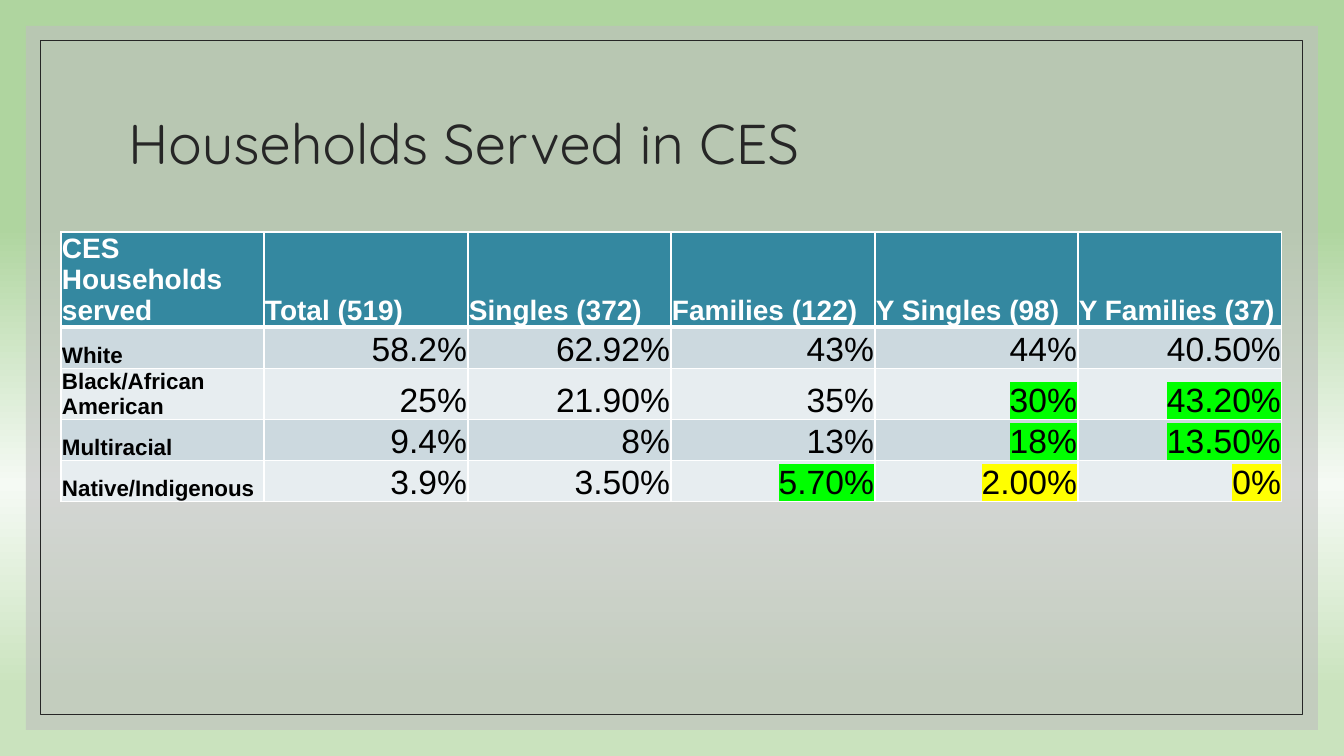
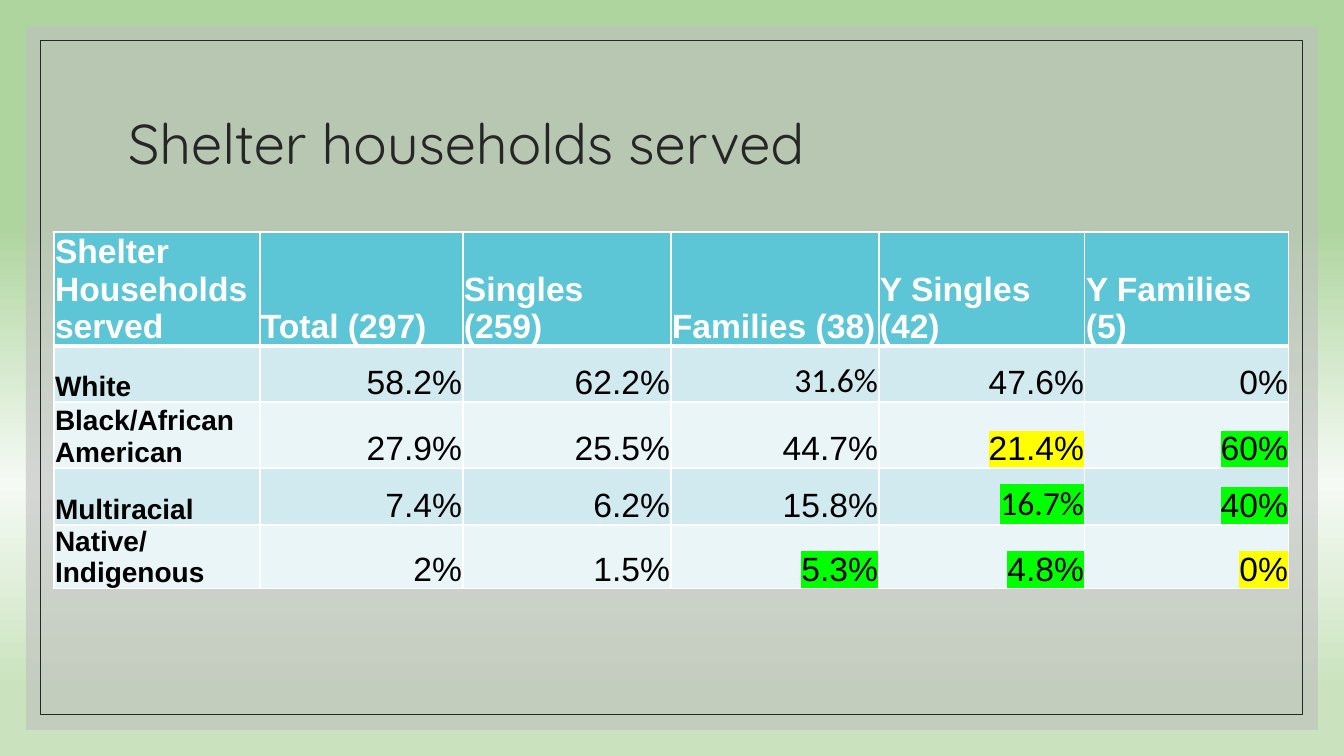
from dataclasses import dataclass
from typing import Optional

from lxml import etree
from pptx import Presentation
from pptx.dml.color import RGBColor
from pptx.enum.shapes import MSO_SHAPE
from pptx.enum.text import MSO_ANCHOR, PP_ALIGN
from pptx.oxml.ns import qn
from pptx.util import Emu, Pt

RECTANGLE = MSO_SHAPE.RECTANGLE
MIDDLE, BOTTOM = MSO_ANCHOR.MIDDLE, MSO_ANCHOR.BOTTOM
LEFT, RIGHT = PP_ALIGN.LEFT, PP_ALIGN.RIGHT

# Shared look
EMU_PER_PX = 914400 / 100.8
SLIDE_WIDTH, SLIDE_HEIGHT = 1344, 756
TITLE_BOX = (118, 71, 1109, 151)
TITLE_FONT, BODY_FONT, ALTERNATE_FONT = "Quicksand", "Arial", "Calibri"
TITLE_SIZE, VALUE_SIZE = 40, 24

WHITE = RGBColor(0xFF, 0xFF, 0xFF)
BLACK = RGBColor(0x00, 0x00, 0x00)
INK = RGBColor(0x26, 0x26, 0x26)
PANEL_GREY = RGBColor(0xBF, 0xBF, 0xBF)
GREEN = RGBColor(0x00, 0xFF, 0x00)
YELLOW = RGBColor(0xFF, 0xFF, 0x00)
LEAF = RGBColor(0xAF, 0xD5, 0x9F)
MIST = RGBColor(0xF5, 0xFA, 0xF4)
PALE_LEAF = RGBColor(0xCA, 0xE3, 0xBE)
BACKGROUND_STOPS = [(0, LEAF), (30, LEAF), (64, MIST), (91, PALE_LEAF), (100, PALE_LEAF)]


@dataclass
class TableStyle:
    header: RGBColor
    bands: tuple
    header_size: int
    label_size: int


@dataclass
class Value:
    text: str
    highlight: Optional[RGBColor] = None
    font: str = BODY_FONT


CES_STYLE = TableStyle(
    RGBColor(0x34, 0x88, 0xA0),
    (RGBColor(0xCC, 0xD9, 0xDF), RGBColor(0xE7, 0xED, 0xF0)), 20, 16)
SHELTER_STYLE = TableStyle(
    RGBColor(0x5C, 0xC6, 0xD6),
    (RGBColor(0xD1, 0xEA, 0xF0), RGBColor(0xE9, 0xF5, 0xF7)), 24, 20)

CES_ROWS = [
    ["CES Households served", "Total (519)", "Singles (372)", "Families (122)",
     "Y Singles (98)", "Y Families (37)"],
    ["White", "58.2%", "62.92%", "43%", "44%", "40.50%"],
    ["Black/African American", "25%", "21.90%", "35%",
     Value("30%", GREEN), Value("43.20%", GREEN)],
    ["Multiracial", "9.4%", "8%", "13%", Value("18%", GREEN), Value("13.50%", GREEN)],
    ["Native/Indigenous", "3.9%", "3.50%", Value("5.70%", GREEN),
     Value("2.00%", YELLOW), Value("0%", YELLOW)],
]
SHELTER_ROWS = [
    ["Shelter Households served", "Total (297)", "Singles (259)", "Families (38)",
     "Y Singles (42)", "Y Families (5)"],
    ["White", "58.2%", "62.2%", Value("31.6%", font=ALTERNATE_FONT), "47.6%", "0%"],
    ["Black/African American", "27.9%", "25.5%", "44.7%",
     Value("21.4%", YELLOW), Value("60%", GREEN)],
    ["Multiracial", "7.4%", "6.2%", "15.8%",
     Value("16.7%", GREEN, ALTERNATE_FONT), Value("40%", GREEN)],
    ["Native/Indigenous", "2%", "1.5%", Value("5.3%", GREEN),
     Value("4.8%", GREEN), Value("0%", YELLOW)],
]


def px(length):
    return Emu(round(length * EMU_PER_PX))


def add_color(parent, color):
    return etree.SubElement(parent, qn("a:srgbClr"), val=str(color))


def add_run(paragraph, text, size, color, font, bold=False, highlight=None):
    run = paragraph.add_run()
    run.text = text
    run.font.size = Pt(size)
    run.font.bold = bold
    run.font.color.rgb = color
    if highlight is not None:
        properties = run._r.get_or_add_rPr()
        add_color(etree.SubElement(properties, qn("a:highlight")), highlight)
    run.font.name = font


def style_master(presentation, slide):
    """Put the gradient and the framed panel on the master, by way of a slide."""
    master = presentation.slide_master
    fill = master.background.fill
    fill.gradient()
    fill.gradient_angle = 270
    stops = master.element.find(".//" + qn("p:bg")).find(".//" + qn("a:gsLst"))
    for stop in list(stops):
        stops.remove(stop)
    for percent, color in BACKGROUND_STOPS:
        add_color(etree.SubElement(stops, qn("a:gs"), pos=str(percent * 1000)), color)

    # Translucent panel and thin frame, each inset evenly from the slide edge
    panel, frame = [
        slide.shapes.add_shape(
            RECTANGLE, px(inset), px(inset),
            px(SLIDE_WIDTH - 2 * inset), px(SLIDE_HEIGHT - 2 * inset))
        for inset in (26, 41)]
    panel.fill.solid()
    panel.fill.fore_color.rgb = PANEL_GREY
    color = panel.element.spPr.find(".//" + qn("a:srgbClr"))
    etree.SubElement(color, qn("a:alpha"), val="60000")
    panel.line.fill.background()
    frame.fill.background()
    frame.line.color.rgb = INK
    frame.line.width = Pt(0.75)
    for position, shape in enumerate((panel, frame), start=2):
        shape.shadow.inherit = False
        master.shapes.element.insert(position, shape.element)


def set_title(slide, text, box):
    title = slide.shapes.title
    title.left, title.top, title.width, title.height = map(px, box)
    title.text_frame.vertical_anchor = MIDDLE
    paragraph = title.text_frame.paragraphs[0]
    paragraph.alignment = LEFT
    paragraph.line_spacing = 0.9
    add_run(paragraph, text, TITLE_SIZE, INK, TITLE_FONT)


def set_borders(cell, top, bottom):
    properties = cell._tc.get_or_add_tcPr()
    for side, width in (("L", 1), ("R", 1), ("T", top), ("B", bottom)):
        line = etree.SubElement(properties, qn("a:ln" + side), w=str(Pt(width)))
        add_color(etree.SubElement(line, qn("a:solidFill")), WHITE)


def fill_cell(cell, value, row, column, style):
    if isinstance(value, str):
        value = Value(value)
    is_header, is_label = row == 0, column == 0
    cell.margin_left = cell.margin_right = cell.margin_top = px(1)
    cell.margin_bottom = 0
    cell.vertical_anchor = BOTTOM
    set_borders(cell, 3 if row == 1 else 1, 3 if is_header else 1)
    cell.fill.solid()
    cell.fill.fore_color.rgb = style.header if is_header else style.bands[(row - 1) % 2]

    if is_header:
        size = style.header_size
    else:
        size = style.label_size if is_label else VALUE_SIZE
    paragraph = cell.text_frame.paragraphs[0]
    paragraph.alignment = LEFT if is_header or is_label else RIGHT
    add_run(paragraph, value.text, size, WHITE if is_header else BLACK,
            value.font, is_header or is_label, value.highlight)


def add_data_table(slide, left, top, widths, heights, rows, style):
    table = slide.shapes.add_table(
        len(heights), len(widths), px(left), px(top),
        px(sum(widths)), px(sum(heights))).table
    for column, width in zip(table.columns, widths):
        column.width = px(width)
    for row, height in zip(table.rows, heights):
        row.height = px(height)
    for row_index, values in enumerate(rows):
        for column_index, value in enumerate(values):
            fill_cell(table.cell(row_index, column_index), value,
                      row_index, column_index, style)


def add_table_slide(presentation, title, **table):
    slide = presentation.slides.add_slide(presentation.slide_layouts.get_by_name("Title Only"))
    set_title(slide, title, TITLE_BOX)
    add_data_table(slide, **table)
    return slide


def main():
    presentation = Presentation()
    presentation.slide_width = px(SLIDE_WIDTH)
    presentation.slide_height = px(SLIDE_HEIGHT)
    ces_slide = add_table_slide(
        presentation, "Households Served in CES", left=61, top=232,
        widths=[203, 204] * 3, heights=[94, 42, 50, 41, 41],
        rows=CES_ROWS, style=CES_STYLE)
    add_table_slide(
        presentation, "Shelter households served", left=54, top=232,
        widths=[206, 203, 208, 208, 206, 204], heights=[114, 56, 66, 57, 62],
        rows=SHELTER_ROWS, style=SHELTER_STYLE)
    style_master(presentation, ces_slide)
    presentation.save("out.pptx")


if __name__ == "__main__":
    main()
